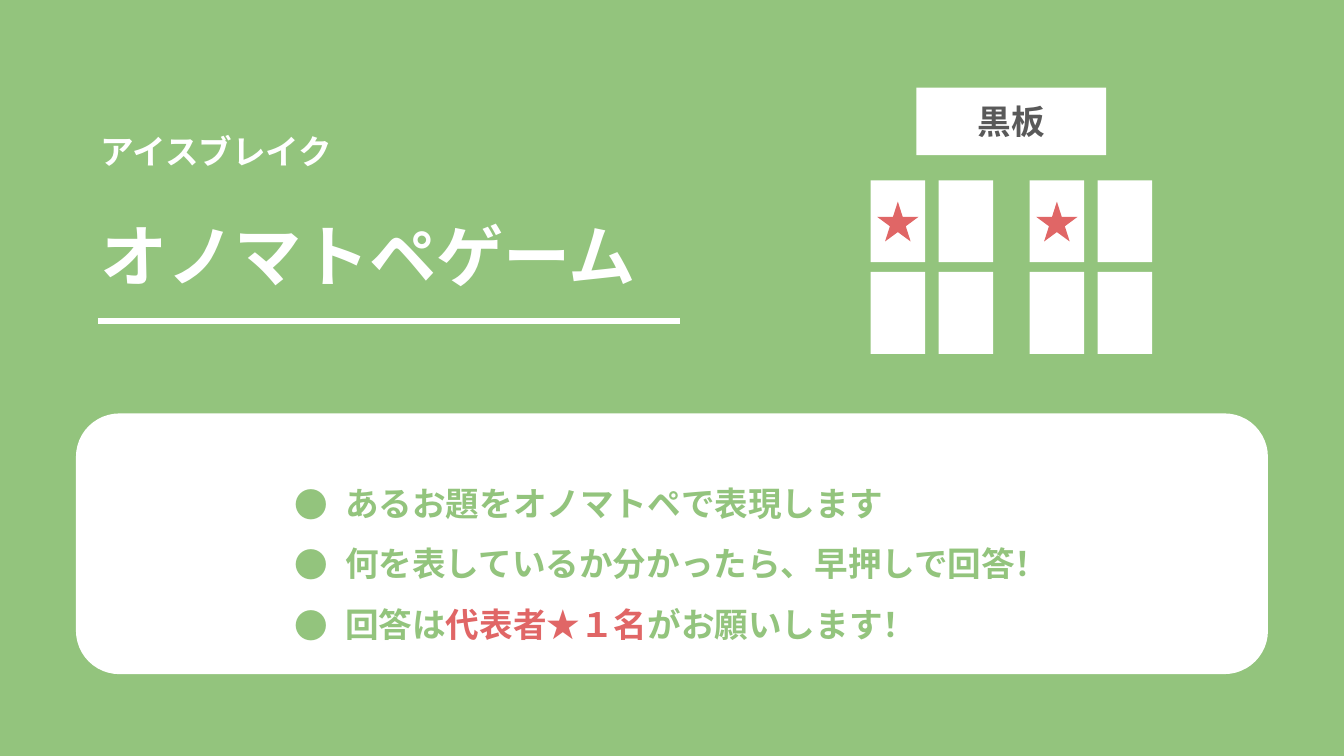
from itertools import product

from lxml.etree import SubElement
from pptx import Presentation
from pptx.dml.color import RGBColor
from pptx.enum.shapes import MSO_CONNECTOR, MSO_SHAPE as Shape
from pptx.enum.text import MSO_ANCHOR as Anchor, PP_ALIGN as Align
from pptx.oxml.ns import qn
from pptx.util import Pt

FONT = "Noto Sans CJK JP"
GREEN, WHITE, RED, GRAY = "93C47D", "FFFFFF", "E06666", "595959"
RULES = [
    [("あるお題をオノマトペで表現します", GREEN)],
    [("何を表しているか分かったら、早押しで回答！", GREEN)],
    [("回答は", GREEN), ("代表者★１名", RED), ("がお願いします！", GREEN)],
]


def color(value):
    return RGBColor.from_string(value)


def add_filled(shapes, kind, left, top, width, height, fill):
    shape = shapes.add_shape(kind, Pt(left), Pt(top), Pt(width), Pt(height))
    shape.shadow.inherit = False
    shape.fill.solid()
    shape.fill.fore_color.rgb = color(fill)
    shape.line.fill.background()
    return shape


def set_margins(frame):
    frame.margin_left = frame.margin_right = Pt(7.2)
    frame.margin_top = frame.margin_bottom = Pt(7.2)


def style_span(span, size, value):
    span.font.name = FONT
    span.font.size = Pt(size)
    span.font.bold = True
    span.font.color.rgb = color(value)
    SubElement(span.font._element, qn("a:ea"), typeface=FONT)


def add_text_box(slide, left, top, width, height):
    box = slide.shapes.add_textbox(Pt(left), Pt(top), Pt(width), Pt(height))
    box.text_frame.word_wrap = True
    set_margins(box.text_frame)
    return box.text_frame


def add_heading(slide, text, left, top, width, height, size):
    frame = add_text_box(slide, left, top, width, height)
    frame.text = text
    para = frame.paragraphs[0]
    para.line_spacing = Pt(size * 1.25)
    style_span(para.runs[0], size, WHITE)


def add_bullet(para, value):
    props = para._p.get_or_add_pPr()
    props.set("marL", str(Pt(36)))
    props.set("indent", str(-Pt(27)))
    SubElement(SubElement(props, qn("a:buClr")), qn("a:srgbClr"), val=value)
    SubElement(props, qn("a:buFont"), typeface=FONT)
    SubElement(props, qn("a:buChar"), char="●")


def add_rules(slide):
    frame = add_text_box(slide, 141.8, 240.5, 436.3, 113)
    for index, parts in enumerate(RULES):
        para = frame.add_paragraph() if index else frame.paragraphs[0]
        para.line_spacing = Pt(32.4)
        add_bullet(para, GREEN)
        for text, value in parts:
            span = para.add_run()
            span.text = text
            style_span(span, 18, value)


def add_underline(slide, left, right, top):
    line = slide.shapes.add_connector(
        MSO_CONNECTOR.STRAIGHT, Pt(left), Pt(top), Pt(right), Pt(top))
    line.line.color.rgb = color(WHITE)
    line.line.width = Pt(3)
    SubElement(line._element.spPr, qn("a:effectLst"))


def add_blackboard(slide):
    board = add_filled(slide.shapes, Shape.RECTANGLE, 491, 46.9, 101.6, 36.2, WHITE)
    frame = board.text_frame
    set_margins(frame)
    frame.vertical_anchor = Anchor.MIDDLE
    frame.text = "黒板"
    para = frame.paragraphs[0]
    para.alignment = Align.CENTER
    style_span(para.runs[0], 18, GRAY)


def add_team_desks(slide, left, top):
    team = slide.shapes.add_group_shape().shapes
    for row, column in product(range(2), repeat=2):
        add_filled(team, Shape.RECTANGLE, left + column * 36.5,
                   top + row * 49.1, 29.2, 43.9, WHITE)
    add_filled(team, Shape.STAR_5_POINT, left + 3.5, top + 11.4, 22.2, 21.4, RED)


def main():
    deck = Presentation()
    deck.slide_width, deck.slide_height = Pt(720), Pt(405)
    slide = deck.slides.add_slide(deck.slide_layouts[6])
    slide.background.fill.solid()
    slide.background.fill.fore_color.rgb = color(GREEN)

    add_filled(slide.shapes, Shape.ROUNDED_RECTANGLE, 40.7, 221.5, 638.6, 139.7, WHITE)
    add_heading(slide, "アイスブレイク", 46.8, 61.9, 218.9, 36, 18)
    add_rules(slide)
    add_blackboard(slide)
    add_heading(slide, "オノマトペゲーム", 46.8, 105.8, 327.6, 58.3, 36)
    add_underline(slide, 52.5, 364.3, 172)
    for left in (466.4, 551.6):
        add_team_desks(slide, left, 96.6)
    deck.save("out.pptx")


if __name__ == "__main__":
    main()
